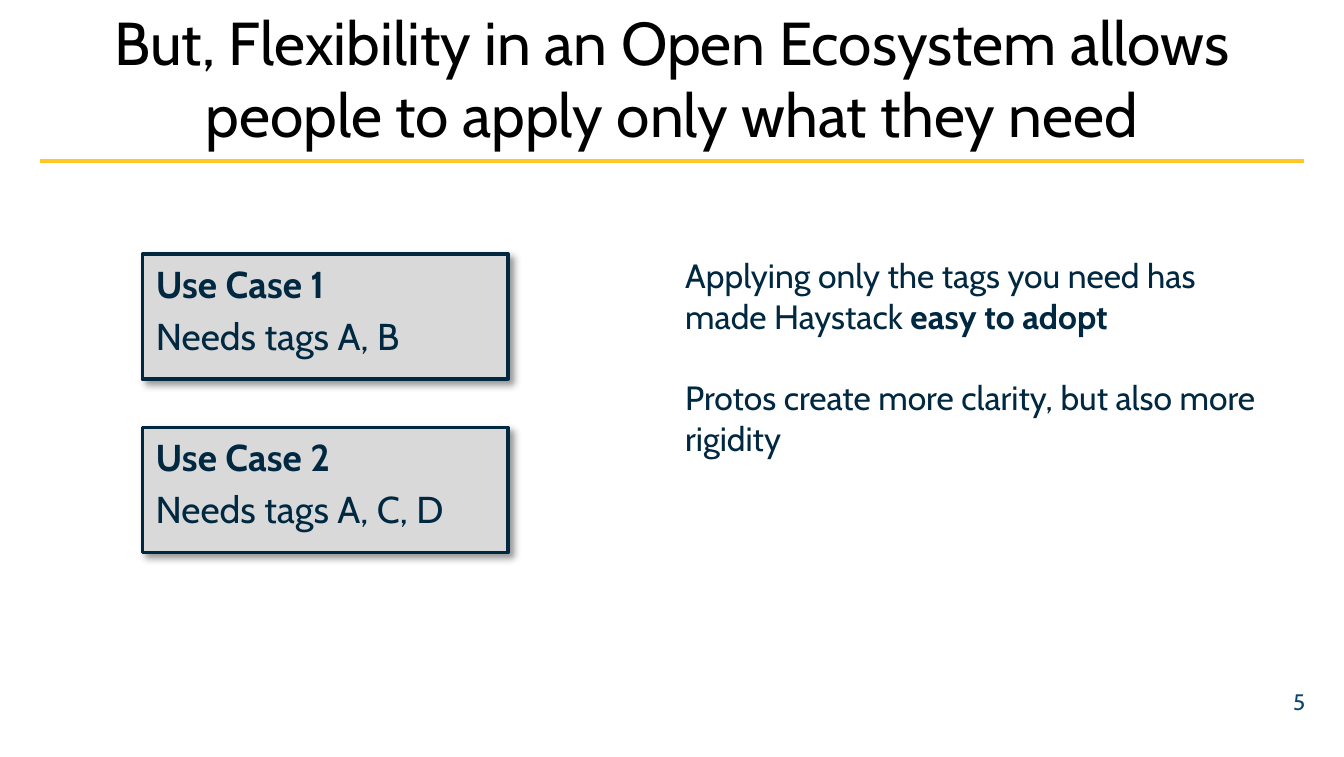
from dataclasses import dataclass

import pptx
import pptx.dml.color
import pptx.enum.shapes
import pptx.enum.text
import pptx.oxml
import pptx.oxml.ns
import pptx.util
from pptx.util import Inches, Pt

FONT = "Cabin"
NAVY = "002841"
ALIGN = pptx.enum.text.PP_ALIGN
ANCHOR = pptx.enum.text.MSO_ANCHOR
AUTO_SIZE = pptx.enum.text.MSO_AUTO_SIZE


@dataclass
class UseCase:
    name: str
    needs: str


USE_CASES = [
    UseCase("Use Case 1", "Needs tags A, B"),
    UseCase("Use Case 2", "Needs tags A, C, D"),
]
CASE_TOP = 1.89
CASE_PITCH = 1.29


def rgb(color: str) -> pptx.dml.color.RGBColor:
    return pptx.dml.color.RGBColor.from_string(color)


def place(shape, left: float, top: float, width: float, height: float) -> None:
    shape.left, shape.top = Inches(left), Inches(top)
    shape.width, shape.height = Inches(width), Inches(height)


def format_text(paragraph, size: float, color: str, align=ALIGN.LEFT) -> None:
    paragraph.alignment = align
    for run in paragraph.runs:
        run.font.name = FONT
        run.font.size = Pt(size)
        run.font.color.rgb = rgb(color)


def remove_bullet(paragraph) -> None:
    properties = paragraph._p.get_or_add_pPr()
    properties.set("marL", "0")
    properties.set("indent", "0")
    properties.append(pptx.oxml.parse_xml(
        f'<a:buNone {pptx.oxml.ns.nsdecls("a")}/>'))


def add_drop_shadow(shape) -> None:
    shape.shadow.inherit = False
    effects = shape._element.spPr.find(pptx.oxml.ns.qn("a:effectLst"))
    effects.append(pptx.oxml.parse_xml(
        f'<a:outerShdw {pptx.oxml.ns.nsdecls("a")} blurRad="{Pt(4)}" '
        f'dist="{Pt(3)}" dir="2700000" algn="tl" rotWithShape="0">'
        '<a:srgbClr val="000000"><a:alpha val="40000"/></a:srgbClr>'
        '</a:outerShdw>'))


def draw_use_case(shape, case: UseCase, top: float) -> None:
    place(shape, 1.06, top, 2.72, 0.93)
    shape.fill.solid()
    shape.fill.fore_color.rgb = rgb("D9D9D9")
    shape.line.color.rgb = rgb(NAVY)
    shape.line.width = Pt(2)
    add_drop_shadow(shape)

    frame = shape.text_frame
    frame.text = f"{case.name}\n{case.needs}"
    frame.word_wrap = True
    frame.auto_size = AUTO_SIZE.NONE
    frame.vertical_anchor = ANCHOR.TOP
    name, needs = frame.paragraphs
    for paragraph in (name, needs):
        remove_bullet(paragraph)
        format_text(paragraph, 20, NAVY)
    name.space_before = Pt(0)
    needs.space_before = Pt(4)
    name.runs[0].font.bold = True


def draw_title(title) -> None:
    place(title, 0.19, 0.28, 9.62, 0.59)
    frame = title.text_frame
    frame.text = ("But, Flexibility in an Open Ecosystem allows "
                  "people to apply only what they need")
    frame.word_wrap = True
    frame.auto_size = AUTO_SIZE.NONE
    frame.vertical_anchor = ANCHOR.MIDDLE
    format_text(frame.paragraphs[0], 32.4, "000000", ALIGN.CENTER)


def draw_page_number(slide) -> None:
    number = slide.shapes.add_textbox(
        Inches(7.48), Inches(5.07), Inches(2.33), Inches(0.3))
    number.text_frame.text = "5"
    number.text_frame.word_wrap = True
    number.text_frame.vertical_anchor = ANCHOR.MIDDLE
    format_text(number.text_frame.paragraphs[0], 12, "0C456E", ALIGN.RIGHT)


def draw_remarks(slide) -> None:
    remarks = slide.shapes.add_textbox(
        Inches(5), Inches(1.85), Inches(4.45), Inches(1.62))
    frame = remarks.text_frame
    frame.word_wrap = True
    frame.auto_size = AUTO_SIZE.SHAPE_TO_FIT_TEXT
    frame.text = ("Applying only the tags you need has made Haystack \n"
                  "Protos create more clarity, but also more rigidity")
    adoption, rigidity = frame.paragraphs
    emphasis = adoption.add_run()
    emphasis.text = "easy to adopt"
    emphasis.font.bold = True
    rigidity.space_before = Pt(22)
    for paragraph in (adoption, rigidity):
        format_text(paragraph, 18, NAVY)


def draw_title_rule(slide) -> None:
    rule = slide.shapes.add_connector(
        pptx.enum.shapes.MSO_CONNECTOR.STRAIGHT,
        Inches(9.7), Inches(1.2), Inches(0.3), Inches(1.2))
    rule.line.color.rgb = rgb("FFC824")
    rule.line.width = Pt(2)
    rule._element.spPr.append(pptx.oxml.parse_xml(
        f'<a:effectLst {pptx.oxml.ns.nsdecls("a")}/>'))


def main() -> None:
    deck = pptx.Presentation()
    deck.slide_width, deck.slide_height = Inches(10), Inches(5.63)
    slide = deck.slides.add_slide(deck.slide_layouts[1])

    draw_title(slide.shapes.title)
    for index, case in enumerate(USE_CASES):
        if index == 0:
            box = slide.placeholders[1]
        else:
            box = slide.shapes.add_shape(
                pptx.enum.shapes.MSO_SHAPE.RECTANGLE, 0, 0, 0, 0)
        draw_use_case(box, case, CASE_TOP + index * CASE_PITCH)
    draw_page_number(slide)
    draw_remarks(slide)
    draw_title_rule(slide)
    deck.save("out.pptx")


if __name__ == "__main__":
    main()
